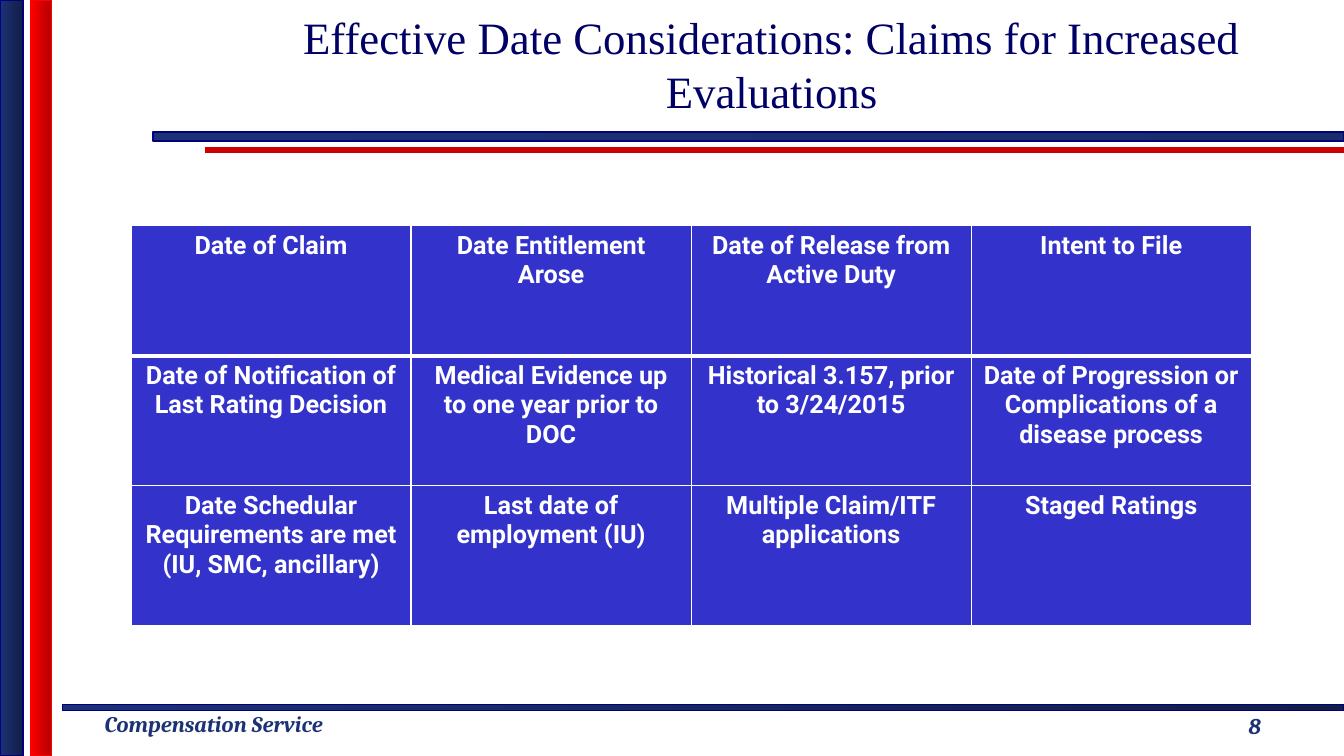
from lxml import etree
from pptx import Presentation
from pptx.dml.color import RGBColor
from pptx.enum.shapes import MSO_CONNECTOR, MSO_SHAPE
from pptx.enum.text import MSO_ANCHOR, PP_ALIGN
from pptx.oxml.ns import qn
from pptx.util import Inches, Pt

RECT = MSO_SHAPE.RECTANGLE
STRAIGHT = MSO_CONNECTOR.STRAIGHT
MIDDLE, TOP = MSO_ANCHOR.MIDDLE, MSO_ANCHOR.TOP
CENTER, LEFT = PP_ALIGN.CENTER, PP_ALIGN.LEFT

WIDTH, HEIGHT = Inches(13.33), Inches(7.5)
NAVY, DARK, EDGE = "1D3275", "111E46", "000080"
RED, WHITE = "FF0000", "FFFFFF"

BARS = [
    ((4.65, 93.2, 95.35, 0.8), NAVY, DARK, EDGE),
    ((11.4, 17.47, 88.6, 1.2), NAVY, "1A2D69", EDGE),
    ((0, 0, 1.73, 100), NAVY, DARK, EDGE),
    ((2.25, 0, 1.58, 100), RED, "B20000", RED),
]
ROWS = [17.2, 17.2, 18.53]
CELLS = [
    ["Date of Claim", "Date Entitlement Arose",
     "Date of Release from Active Duty", "Intent to File"],
    ["Date of Notification of Last Rating Decision",
     "Medical Evidence up to one year prior to DOC",
     "Historical 3.157, prior to 3/24/2015",
     "Date of Progression or Complications of a disease process"],
    ["Date Schedular Requirements are met (IU, SMC, ancillary)",
     "Last date of employment (IU)",
     "Multiple Claim/ITF applications", "Staged Ratings"],
]


def color(code):
    return RGBColor.from_string(code)


def across(share):
    return int(WIDTH * share / 100)


def down(share):
    return int(HEIGHT * share / 100)


def place(box):
    left, top, width, height = box
    return across(left), down(top), across(width), down(height)


def style(frame, name, size, code, bold=False, italic=False, align=CENTER):
    for par in frame.paragraphs:
        par.alignment = align
        for run in par.runs:
            font = run.font
            font.name, font.size = name, Pt(size)
            font.bold, font.italic = bold, italic
            font.color.rgb = color(code)


def add_bar(slide, box, start, end, edge):
    bar = slide.shapes.add_shape(RECT, *place(box))
    bar.shadow.inherit = False
    bar.fill.gradient()
    bar.fill.gradient_angle = 0
    for stop, code in zip(bar.fill.gradient_stops, (start, end)):
        stop.color.rgb = color(code)
    bar.line.color.rgb = color(edge)
    bar.line.width = Pt(1)


def add_rule(slide, left, top, code, width):
    rule = slide.shapes.add_connector(
        STRAIGHT, across(left), down(top), WIDTH, down(top))
    rule.line.color.rgb = color(code)
    rule.line.width = Pt(width)
    etree.SubElement(rule.element.spPr, qn("a:effectLst"))


def add_text(slide, box, text, anchor=MIDDLE, wrap=True, **look):
    frame = slide.shapes.add_textbox(*place(box)).text_frame
    frame.word_wrap = wrap
    frame.vertical_anchor = anchor
    frame.text = text
    style(frame, **look)


def add_border(cell, side, width):
    line = etree.SubElement(
        cell._tc.get_or_add_tcPr(), qn(f"a:ln{side}"), w=str(Pt(width)))
    fill = etree.SubElement(line, qn("a:solidFill"))
    etree.SubElement(fill, qn("a:srgbClr"), val=WHITE)


def add_grid(slide, box):
    grid = slide.shapes.add_table(
        len(CELLS), len(CELLS[0]), *place(box)).table
    for row, share in zip(grid.rows, ROWS):
        row.height = down(share)
    for i, texts in enumerate(CELLS):
        for j, text in enumerate(texts):
            cell = grid.cell(i, j)
            widths = {"L": 1, "R": 1,
                      "T": 3 if i == 1 else 1, "B": 3 if i == 0 else 1}
            for side, width in widths.items():
                add_border(cell, side, width)
            cell.fill.solid()
            cell.fill.fore_color.rgb = color("3333CC")
            cell.text_frame.text = text
            style(cell.text_frame, "Roboto", 18, WHITE, bold=True)


def main():
    deck = Presentation()
    deck.slide_width, deck.slide_height = WIDTH, HEIGHT
    slide = deck.slides.add_slide(deck.slide_layouts[6])
    add_rule(slide, 15.23, 19.87, "CC0000", 4)
    for bar in BARS:
        add_bar(slide, *bar)
    foot = dict(name="Cambria", size=16, code=NAVY, bold=True, italic=True)
    add_text(slide, (7.05, 93.33, 21.16, 4.93), "Compensation Service",
             anchor=TOP, wrap=False, align=LEFT, **foot)
    add_text(slide, (17.55, 0, 79.74, 16.8),
             "Effective Date Considerations: Claims for Increased Evaluations",
             name="Times New Roman", size=32, code="000066")
    add_grid(slide, (9.75, 29.87, 83.35, sum(ROWS)))
    add_text(slide, (86.72, 92.67, 13.28, 6.67), "8", **foot)
    deck.save("out.pptx")


if __name__ == "__main__":
    main()
